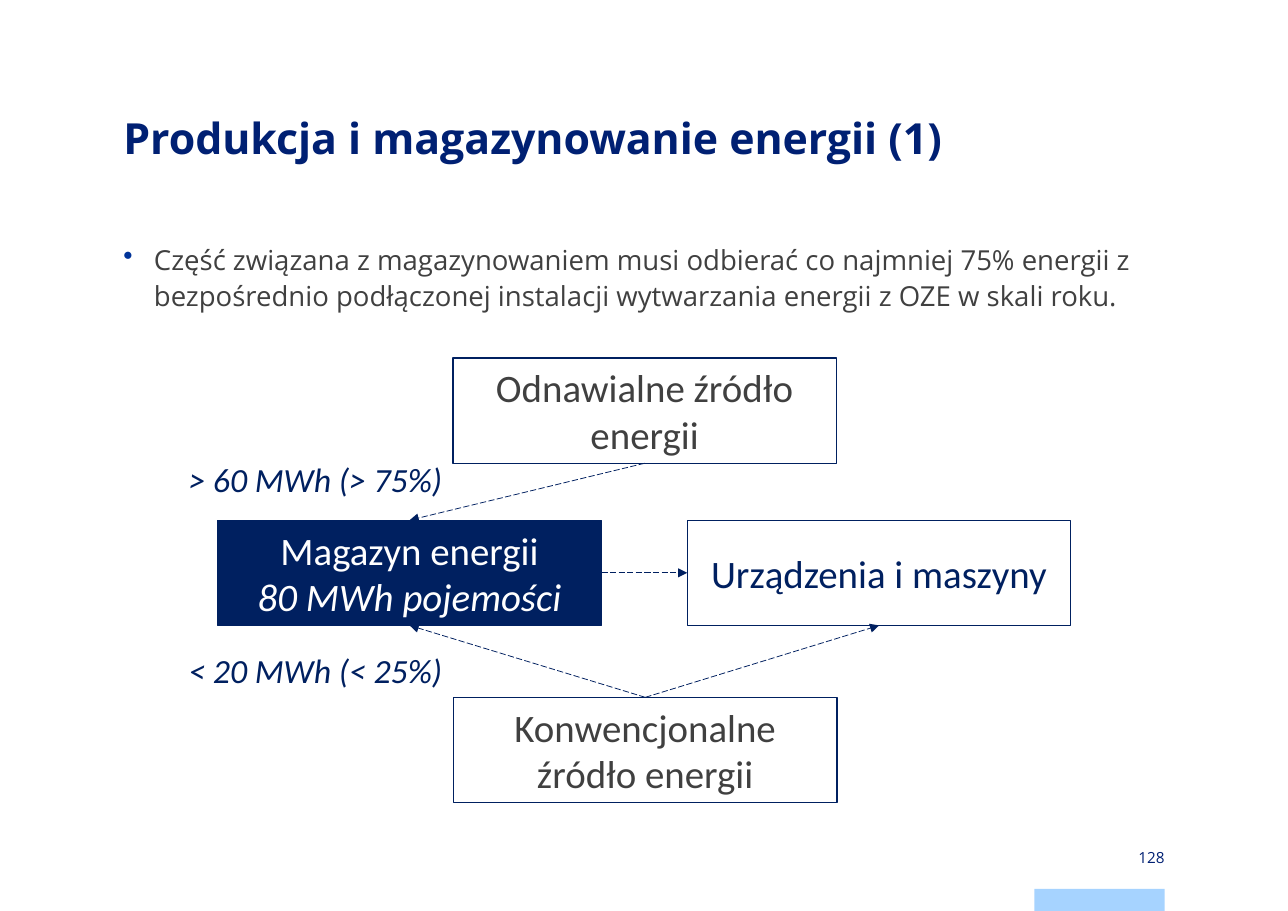
from lxml import etree
from pptx import Presentation
from pptx.dml.color import RGBColor
from pptx.enum.dml import MSO_LINE
from pptx.enum.shapes import MSO_CONNECTOR, MSO_SHAPE
from pptx.enum.text import MSO_ANCHOR, PP_ALIGN
from pptx.oxml.ns import qn
from pptx.util import Pt

RECTANGLE = MSO_SHAPE.RECTANGLE
STRAIGHT = MSO_CONNECTOR.STRAIGHT
LONG_DASH = MSO_LINE.LONG_DASH
TOP, MIDDLE = MSO_ANCHOR.TOP, MSO_ANCHOR.MIDDLE
LEFT, CENTER, RIGHT = PP_ALIGN.LEFT, PP_ALIGN.CENTER, PP_ALIGN.RIGHT
SITE_TOP, SITE_LEFT, SITE_BOTTOM, SITE_RIGHT = range(4)

NAVY, TITLE_BLUE, GREY, WHITE = "002060", "002073", "404040", "FFFFFF"
BULLET_BLUE, LIGHT_BLUE = "003399", "A6D3FF"
MARGIN, CONTENT_WIDTH = 80.6, 680.4
FOOTER_LEFT, FOOTER_WIDTH = 676, 85
BOX_WIDTH, BOX_HEIGHT = 250.6, 68.8


def color(value):
    return RGBColor.from_string(value)


def write(shape, lines, alignment, anchor, font, insets=(7.2, 3.6)):
    frame = shape.text_frame
    horizontal, vertical = insets
    settings = {
        "word_wrap": True, "vertical_anchor": anchor,
        "margin_left": Pt(horizontal), "margin_right": Pt(horizontal),
        "margin_top": Pt(vertical), "margin_bottom": Pt(vertical),
    }
    for name, value in settings.items():
        setattr(frame, name, value)
    for index, (text, italic) in enumerate(lines):
        paragraph = frame.add_paragraph() if index else frame.paragraphs[0]
        paragraph.alignment = alignment
        run = paragraph.add_run()
        run.text = text
        name, size, bold, text_color = font
        values = {"name": name, "size": Pt(size), "bold": bold, "italic": italic}
        for key, value in values.items():
            setattr(run.font, key, value)
        run.font.color.rgb = color(text_color)
    return frame.paragraphs[0]


presentation = Presentation()
presentation.slide_width = Pt(841.68)
presentation.slide_height = Pt(595.44)
slide = presentation.slides.add_slide(presentation.slide_layouts[6])
shapes = slide.shapes

footer_bar = shapes.add_shape(RECTANGLE, Pt(FOOTER_LEFT), Pt(581), Pt(FOOTER_WIDTH), Pt(14.4))
footer_bar.shadow.inherit = False
footer_bar.fill.solid()
footer_bar.fill.fore_color.rgb = color(LIGHT_BLUE)
footer_bar.line.fill.background()

title = shapes.add_textbox(Pt(MARGIN), Pt(70.6), Pt(CONTENT_WIDTH), Pt(85))
paragraph = write(title, [("Produkcja i magazynowanie energii (1)", False)], LEFT, TOP,
                  ("Open Sans", 28, True, TITLE_BLUE), (0, 0))
paragraph.line_spacing = Pt(36)

body = shapes.add_textbox(Pt(MARGIN), Pt(156.2), Pt(CONTENT_WIDTH), Pt(60))
paragraph = write(body, [("Część związana z magazynowaniem musi odbierać co najmniej 75% energii z "
                          "bezpośrednio podłączonej instalacji wytwarzania energii z OZE w skali roku.", False)],
                  LEFT, TOP, ("Open Sans", 18, False, GREY), (0, 0))
paragraph.line_spacing = Pt(24)
properties = paragraph._p.get_or_add_pPr()
properties.set("marL", str(Pt(20)))
properties.set("indent", str(-Pt(20)))
bullet_color = etree.SubElement(properties, qn("a:buClr"))
etree.SubElement(bullet_color, qn("a:srgbClr"), val=BULLET_BLUE)
etree.SubElement(properties, qn("a:buChar"), char="•")

page_number = shapes.add_textbox(Pt(FOOTER_LEFT), Pt(553), Pt(FOOTER_WIDTH), Pt(14.4))
write(page_number, [("128", False)], RIGHT, MIDDLE, ("Open Sans", 10, False, TITLE_BLUE), (0, 0))

boxes = {}
for key, left, top, fill, text_color, lines in [
    ("renewable", 296, 234, None, GREY, [("Odnawialne źródło energii", False)]),
    ("storage", 142.4, 340, NAVY, WHITE, [("Magazyn energii", False), ("80 MWh pojemości", True)]),
    ("devices", 449.2, 340, None, NAVY, [("Urządzenia i maszyny", False)]),
    ("conventional", 296.4, 455.8, None, GREY, [("Konwencjonalne źródło energii", False)]),
]:
    box = shapes.add_shape(RECTANGLE, Pt(left), Pt(top), Pt(BOX_WIDTH), Pt(BOX_HEIGHT))
    box.shadow.inherit = False
    if fill:
        box.fill.solid()
        box.fill.fore_color.rgb = color(fill)
    else:
        box.fill.background()
    box.line.color.rgb = color(NAVY)
    box.line.width = Pt(0.75)
    write(box, lines, CENTER, MIDDLE, ("Calibri", 25.4, False, text_color))
    boxes[key] = box

for source, source_site, target, target_site in [
    ("renewable", SITE_BOTTOM, "storage", SITE_TOP),
    ("storage", SITE_RIGHT, "devices", SITE_LEFT),
    ("conventional", SITE_TOP, "storage", SITE_BOTTOM),
    ("conventional", SITE_TOP, "devices", SITE_BOTTOM),
]:
    arrow = shapes.add_connector(STRAIGHT, 0, 0, 0, 0)
    arrow.begin_connect(boxes[source], source_site)
    arrow.end_connect(boxes[target], target_site)
    arrow.line.color.rgb = color(NAVY)
    arrow.line.width = Pt(0.5)
    arrow.line.dash_style = LONG_DASH
    etree.SubElement(arrow.line._get_or_add_ln(), qn("a:tailEnd"), type="triangle")
    etree.SubElement(arrow._element.spPr, qn("a:effectLst"))

for text, top in [("> 60 MWh (> 75%)", 296.6), ("< 20 MWh (< 25%)", 421.2)]:
    label = shapes.add_textbox(Pt(45.4), Pt(top), Pt(BOX_WIDTH), Pt(33.8))
    write(label, [(text, True)], RIGHT, TOP, ("Calibri", 22.1, False, NAVY))

presentation.save("out.pptx")
